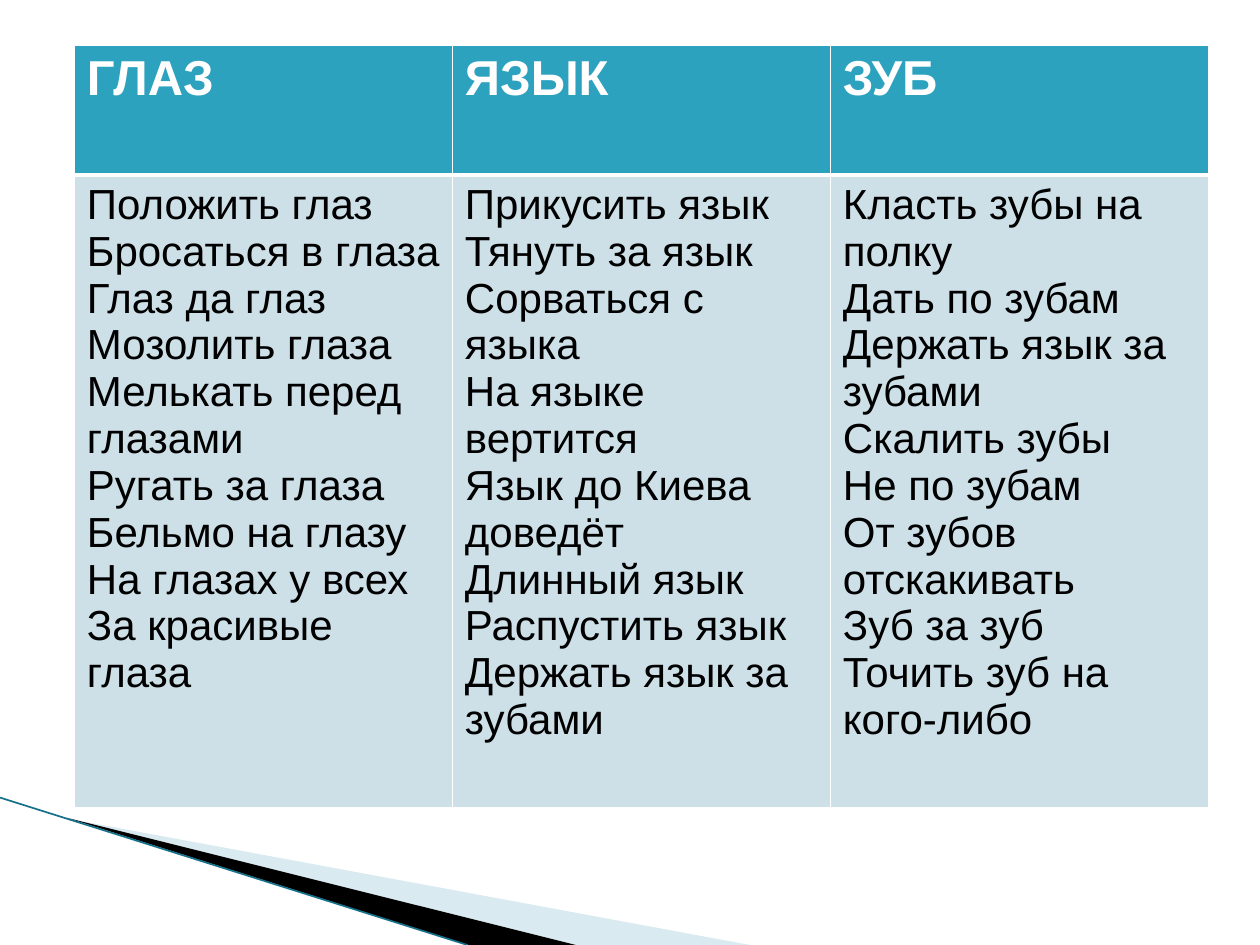
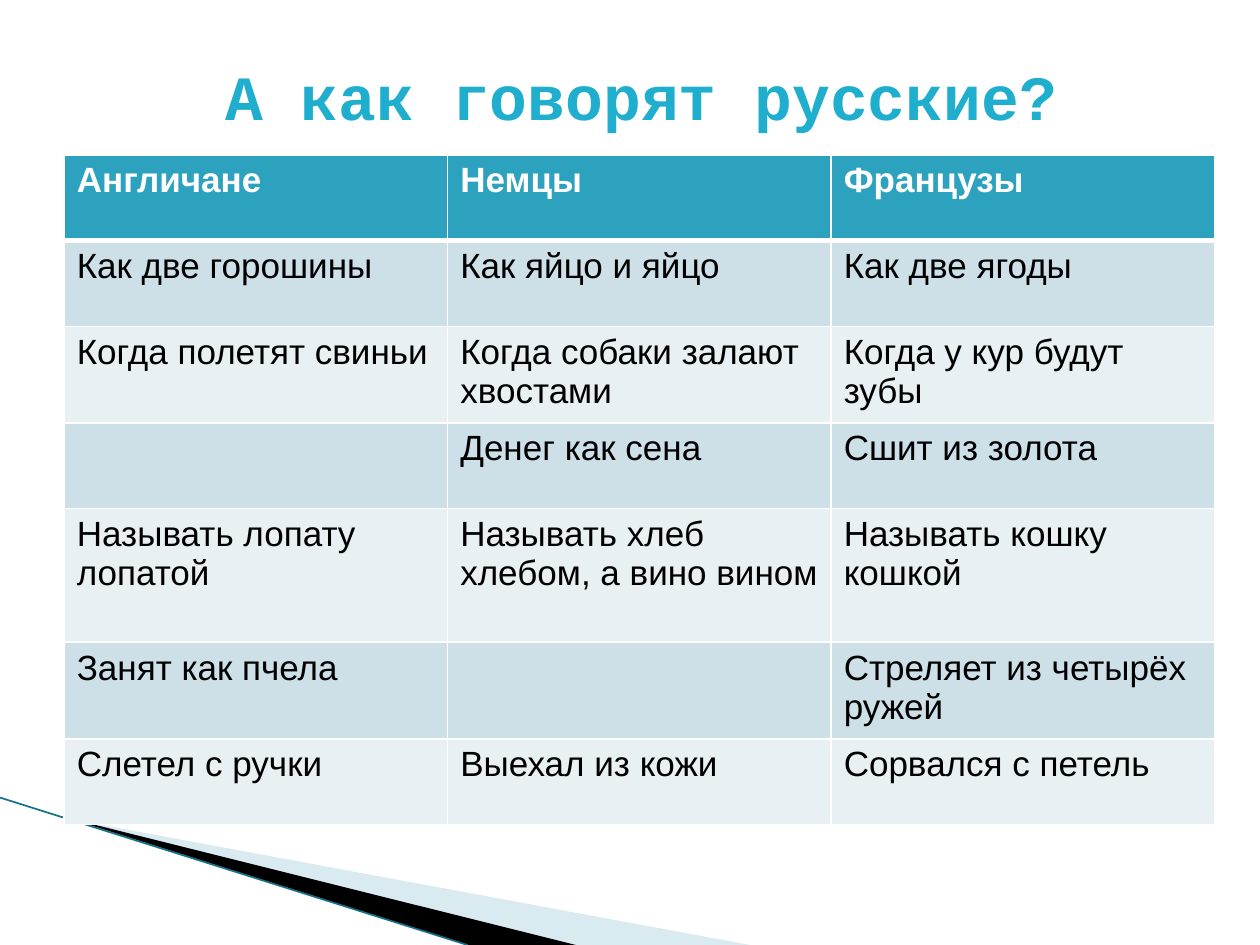
"""Builds two slides of Russian idiom tables over a shared corner of wedges."""
from lxml.etree import SubElement
from pptx import Presentation
from pptx.dml.color import RGBColor as RGB
from pptx.enum.text import MSO_ANCHOR as ANCHOR
from pptx.oxml.ns import qn
from pptx.util import Inches, Pt

COLORS = {"white": "FFFFFF", "header": "2DA2BF", "band": "CDE0E8", "pale": "E8F0F4",
          "text": "000000", "title": "1FAECD", "wedge": "A0CBDC", "edge": "15708A"}
TITLE = {"name": "Courier New", "size": Pt(36), "bold": True}
WEDGES = [("wedge", [(0.55, 6.5), (5.95, 7.5), (4.56, 7.5)]),
          ("text", [(0.53, 6.49), (4.57, 7.5), (3.72, 7.5)])]

IDIOMS = [
    ["ГЛАЗ", "ЯЗЫК", "ЗУБ"],
    ["Положить глаз\nБросаться в глаза\nГлаз да глаз\nМозолить глаза\n"
     "Мелькать перед глазами\nРугать за глаза\nБельмо на глазу\n"
     "На глазах у всех\nЗа красивые глаза",
     "Прикусить язык\nТянуть за язык\nСорваться с языка\nНа языке вертится\n"
     "Язык до Киева доведёт\nДлинный язык\nРаспустить язык\nДержать язык за зубами",
     "Класть зубы на полку\nДать по зубам\nДержать язык за зубами\nСкалить зубы\n"
     "Не по зубам\nОт зубов отскакивать\nЗуб за зуб\nТочить зуб на кого-либо"],
]
SAYINGS = [
    ["Англичане", "Немцы", "Французы"],
    ["Как две горошины", "Как яйцо и яйцо", "Как две ягоды"],
    ["Когда полетят свиньи", "Когда собаки залают хвостами", "Когда у кур будут зубы"],
    ["", "Денег как сена", "Сшит из золота"],
    ["Называть лопату лопатой", "Называть хлеб хлебом, а вино вином",
     "Называть кошку кошкой"],
    ["Занят как пчела", "", "Стреляет из четырёх ружей"],
    ["Слетел с ручки", "Выехал из кожи", "Сорвался с петель"],
]
SLIDES = [
    {"title": None, "rows": IDIOMS, "left": 0.59, "top": 0.36, "width": 9,
     "heights": [1.03, 5.02], "sizes": (28, 24)},
    {"title": "А как говорят русские?", "rows": SAYINGS, "left": 0.51, "top": 1.23,
     "width": 9.13, "heights": [0.68, 0.68, 0.74, 0.68, 1.06, 0.74, 0.68],
     "sizes": (20, 20)},
]


def style_font(font, color, formats):
    for name, value in formats.items():
        setattr(font, name, value)
    font.color.rgb = RGB.from_string(COLORS[color])


def add_borders(cell, widths):
    tcPr = cell._tc.get_or_add_tcPr()
    for side, width in zip("LRTB", widths):
        ln = SubElement(tcPr, qn(f"a:ln{side}"), w=str(Pt(width)))
        fill = SubElement(ln, qn("a:solidFill"))
        SubElement(fill, qn("a:srgbClr"), val=COLORS["white"])


prs = Presentation()
prs.slide_width, prs.slide_height = Inches(10), Inches(7.5)

for page in SLIDES:
    s = prs.slides.add_slide(prs.slide_layouts[6])

    for color, points in WEDGES:
        start, *rest = [(Inches(x), Inches(y)) for x, y in points]
        fb = s.shapes.build_freeform(*start)
        fb.add_line_segments(rest)
        sp = fb.convert_to_shape()
        sp.shadow.inherit = False
        sp.fill.solid()
        sp.fill.fore_color.rgb = RGB.from_string(COLORS[color])
        sp.line.fill.background()
        if color == "wedge":
            clr = sp.fill._xPr.find(".//" + qn("a:srgbClr"))
            SubElement(clr, qn("a:alpha"), val="40000")

    edge = s.shapes.add_connector(1, 0, Inches(6.33), Inches(3.71), Inches(7.5))
    edge.line.color.rgb = RGB.from_string(COLORS["edge"])
    edge.line.width = Pt(0.95)
    SubElement(edge._element.spPr, qn("a:effectLst"))

    if page["title"]:
        tf = s.shapes.add_textbox(Inches(1.69), Inches(0.29), Inches(6.85),
                                  Inches(0.93)).text_frame
        tf.word_wrap = True
        tf.vertical_anchor = ANCHOR.MIDDLE
        r = tf.paragraphs[0].add_run()
        r.text = page["title"]
        style_font(r.font, "title", TITLE)

    rows, heights = page["rows"], page["heights"]
    left, top, width = (Inches(page[key]) for key in ("left", "top", "width"))
    table = s.shapes.add_table(len(rows), len(rows[0]), left, top, width,
                               Inches(sum(heights))).table
    table.horz_banding = False
    for i, (texts, height) in enumerate(zip(rows, heights)):
        table.rows[i].height = Inches(height)
        head = i == 0
        fill = "header" if head else "band" if i % 2 else "pale"
        formats = {"name": "Arial", "size": Pt(page["sizes"][0 if head else 1]),
                   "bold": head}
        for j, text in enumerate(texts):
            cell = table.cell(i, j)
            add_borders(cell, (1, 1, 3 if i == 1 else 1, 3 if head else 1))
            cell.fill.solid()
            cell.fill.fore_color.rgb = RGB.from_string(COLORS[fill])
            cell.text = text
            for p in cell.text_frame.paragraphs:
                for r in p.runs:
                    style_font(r.font, "white" if head else "text", formats)

prs.save("out.pptx")
